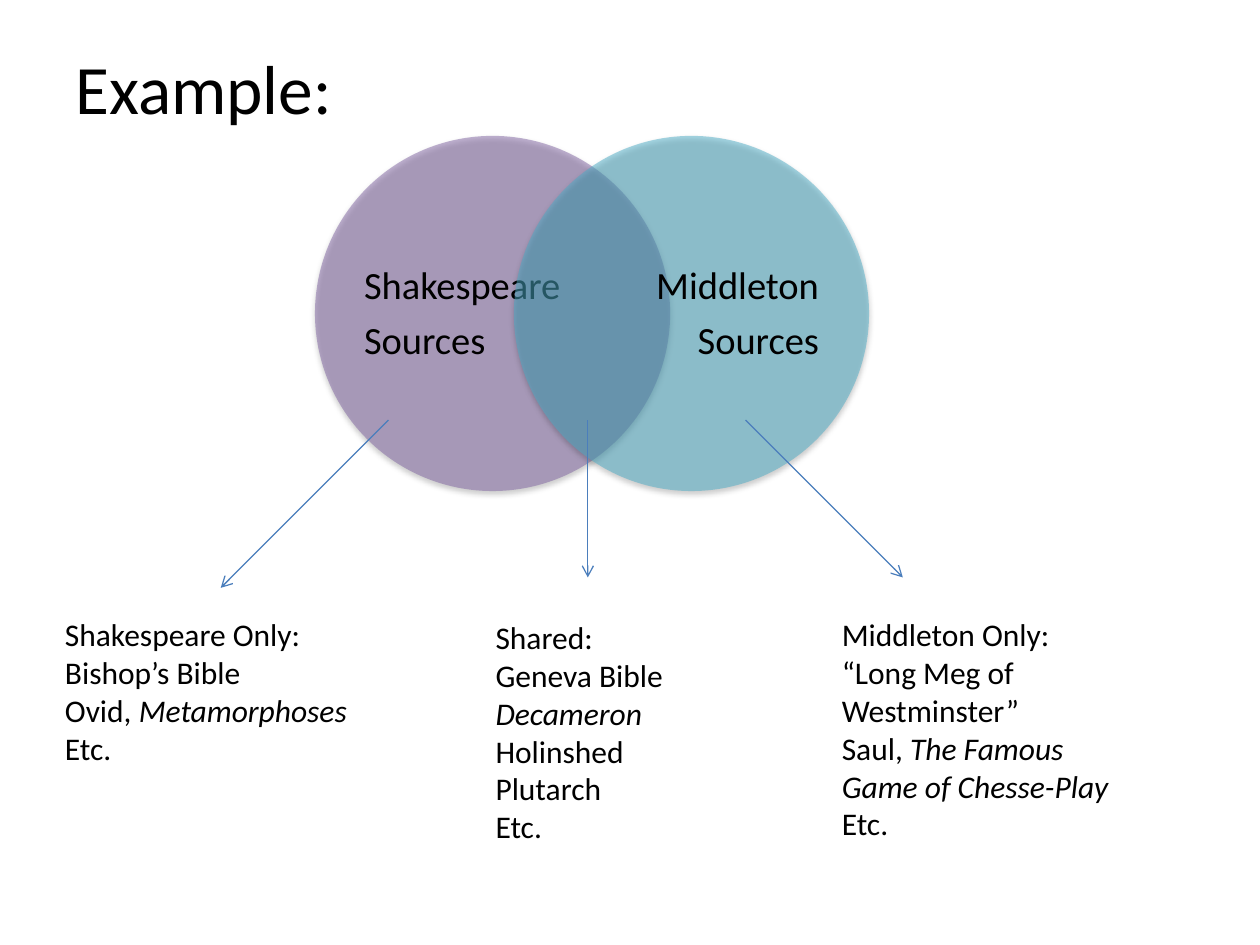
from dataclasses import dataclass

from lxml import etree
from pptx import Presentation
from pptx.dml.color import RGBColor
from pptx.enum.shapes import MSO_CONNECTOR, MSO_SHAPE
from pptx.enum.text import MSO_ANCHOR, MSO_AUTO_SIZE, PP_ALIGN
from pptx.oxml import parse_xml
from pptx.oxml.ns import nsdecls, qn
from pptx.util import Cm, Pt

OVAL = MSO_SHAPE.OVAL
STRAIGHT = MSO_CONNECTOR.STRAIGHT
MIDDLE = MSO_ANCHOR.MIDDLE
LEFT, RIGHT = PP_ALIGN.LEFT, PP_ALIGN.RIGHT
TITLE_ONLY = 5


@dataclass(frozen=True)
class Theme:
    font: str = "Calibri"
    text: RGBColor = RGBColor(0x00, 0x00, 0x00)
    purple: RGBColor = RGBColor(0x80, 0x64, 0xA2)
    teal: RGBColor = RGBColor(0x4B, 0xAC, 0xC6)
    arrow: RGBColor = RGBColor(0x4B, 0x7E, 0xBC)
    title_size: float = 39.6
    label_size: float = 22
    body_size: float = 18


@dataclass(frozen=True)
class Circle:
    left: float
    label_left: float
    color: RGBColor
    align: PP_ALIGN
    lines: tuple[str, ...]


@dataclass(frozen=True)
class Arrow:
    x1: float
    y1: float
    x2: float
    y2: float


@dataclass(frozen=True)
class Line:
    plain: str = ""
    italic: str = ""


@dataclass(frozen=True)
class SourceList:
    left: float
    top: float
    width: float
    height: float
    lines: tuple[Line, ...]


THEME = Theme()

# Venn geometry in centimetres
DIAMETER, CIRCLE_TOP = 7.16, 2.74
LABEL_TOP, LABEL_W, LABEL_H = 3.61, 4.11, 5.46
CIRCLES = (
    Circle(6.35, 7.34, THEME.purple, LEFT, ("Shakespeare", "Sources")),
    Circle(10.36, 12.4, THEME.teal, RIGHT, ("Middleton", "Sources")),
)
ARROWS = (
    Arrow(7.83, 8.47, 4.45, 11.85),
    Arrow(11.85, 8.47, 11.85, 11.64),
    Arrow(15.03, 8.47, 18.2, 11.64),
)
SOURCE_LISTS = (
    SourceList(1.06, 12.28, 6.35, 3.33, (
        Line("Shakespeare Only:"), Line("Bishop’s Bible"),
        Line("Ovid, ", "Metamorphoses"), Line("Etc."))),
    SourceList(9.74, 12.34, 4.23, 4.88, (
        Line("Shared:"), Line("Geneva Bible"), Line(italic="Decameron"),
        Line("Holinshed"), Line("Plutarch"), Line("Etc."))),
    SourceList(16.72, 12.28, 6.15, 4.88, (
        Line("Middleton Only:"), Line("“Long Meg of Westminster”"),
        Line("Saul, ", "The Famous Game of Chesse-Play"), Line("Etc."))),
)


def style(p, size: float, align: PP_ALIGN = LEFT) -> None:
    p.alignment = align
    p.font.name = THEME.font
    p.font.size = Pt(size)
    p.font.color.rgb = THEME.text


def add_title(s, text: str) -> None:
    title = s.shapes.title
    title.left, title.top, title.width, title.height = Cm(1.27), Cm(0.76), Cm(22.86), Cm(1.98)
    tf = title.text_frame
    tf.text = text
    tf.vertical_anchor = MIDDLE
    style(tf.paragraphs[0], THEME.title_size)


def add_circle(shapes, circle: Circle) -> None:
    # Half-transparent disc with a soft shadow below
    sp = shapes.add_shape(OVAL, Cm(circle.left), Cm(CIRCLE_TOP), Cm(DIAMETER), Cm(DIAMETER))
    sp.fill.solid()
    sp.fill.fore_color.rgb = circle.color
    sp.line.fill.background()
    color = sp.fill._xPr.find(f"{qn('a:solidFill')}/{qn('a:srgbClr')}")
    etree.SubElement(color, qn("a:alpha"), val="50000")
    sp._element.spPr.append(parse_xml(
        f'<a:effectLst {nsdecls("a")}>'
        f'<a:outerShdw blurRad="{Pt(3.1)}" dist="{Pt(1.6)}" dir="5400000" rotWithShape="0">'
        '<a:srgbClr val="000000"><a:alpha val="38000"/></a:srgbClr>'
        '</a:outerShdw></a:effectLst>'))

    # Label inside the disc
    box = shapes.add_textbox(Cm(circle.label_left), Cm(LABEL_TOP), Cm(LABEL_W), Cm(LABEL_H))
    tf = box.text_frame
    tf.word_wrap = True
    tf.vertical_anchor = MIDDLE
    tf.margin_left = tf.margin_right = tf.margin_top = tf.margin_bottom = 0
    tf.text = "\n".join(circle.lines)
    for p in tf.paragraphs:
        style(p, THEME.label_size, circle.align)
        p.line_spacing = 0.9
        p.space_after = Pt(7.7)


def add_arrow(s, arrow: Arrow) -> None:
    line = s.shapes.add_connector(
        STRAIGHT, Cm(arrow.x1), Cm(arrow.y1), Cm(arrow.x2), Cm(arrow.y2))
    line.line.color.rgb = THEME.arrow
    line.line.width = Pt(0.75)
    etree.SubElement(line.line._get_or_add_ln(), qn("a:tailEnd"), type="arrow")
    etree.SubElement(line._element.spPr, qn("a:effectLst"))


def add_source_list(s, item: SourceList) -> None:
    box = s.shapes.add_textbox(Cm(item.left), Cm(item.top), Cm(item.width), Cm(item.height))
    tf = box.text_frame
    tf.word_wrap = True
    tf.auto_size = MSO_AUTO_SIZE.SHAPE_TO_FIT_TEXT
    for i, line in enumerate(item.lines):
        p = tf.add_paragraph() if i else tf.paragraphs[0]
        style(p, THEME.body_size)
        if line.plain:
            p.add_run().text = line.plain
        if line.italic:
            r = p.add_run()
            r.text = line.italic
            r.font.italic = True


def main() -> None:
    prs = Presentation()
    prs.slide_width, prs.slide_height = Cm(25.4), Cm(19.05)
    s = prs.slides.add_slide(prs.slide_layouts[TITLE_ONLY])
    add_title(s, "Example:")

    # Venn diagram
    venn = s.shapes.add_group_shape()
    for circle in CIRCLES:
        add_circle(venn.shapes, circle)

    # Arrows to the source lists
    for arrow in ARROWS:
        add_arrow(s, arrow)
    for item in SOURCE_LISTS:
        add_source_list(s, item)

    prs.save("out.pptx")


if __name__ == "__main__":
    main()
